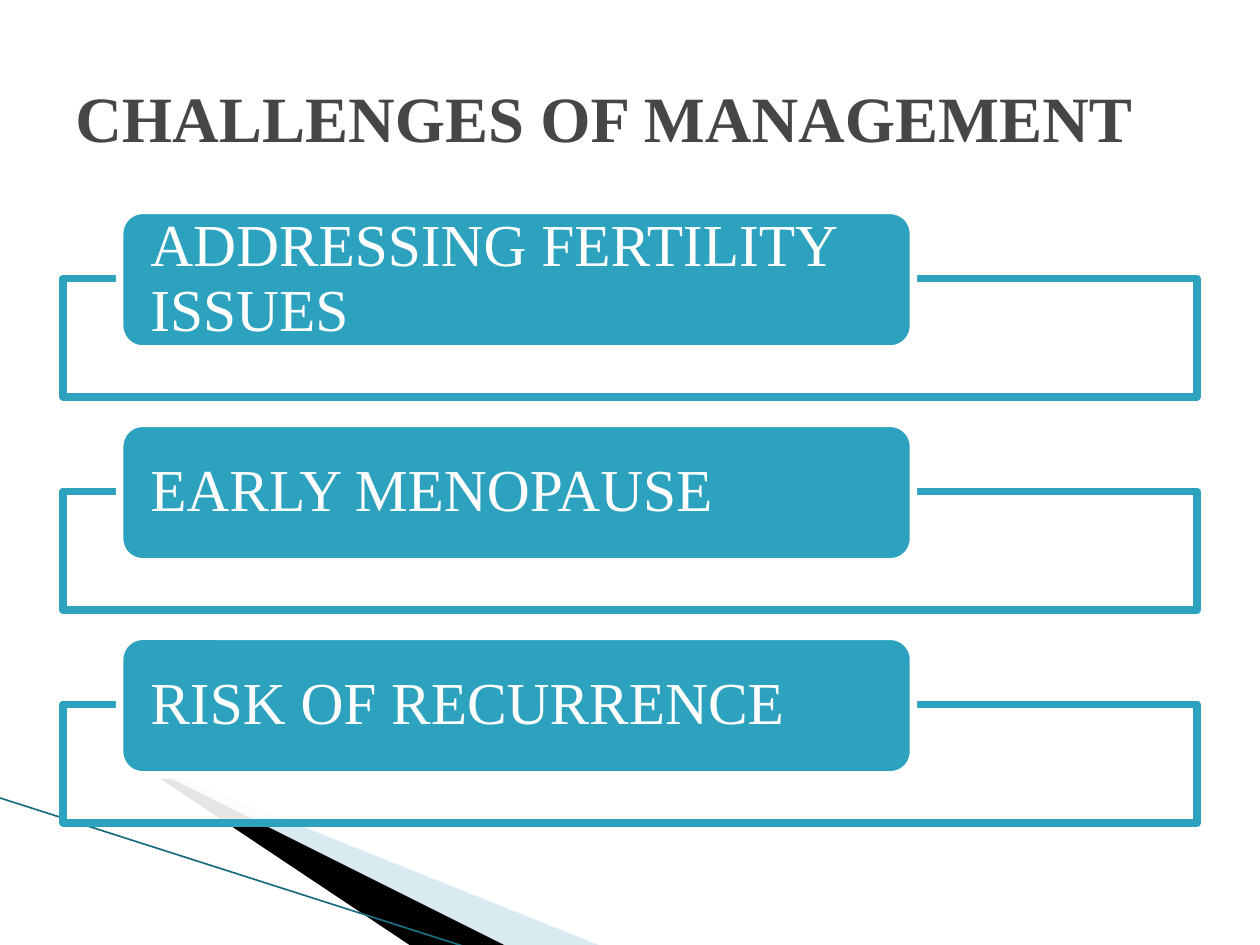
"""Build the slide on the challenges of management."""
from lxml.etree import SubElement
from pptx import Presentation
from pptx.dml.color import RGBColor as Rgb
from pptx.enum.shapes import MSO_CONNECTOR as Link, MSO_SHAPE as Kind
from pptx.enum.text import MSO_ANCHOR as Anchor, PP_ALIGN as Align
from pptx.oxml.ns import qn
from pptx.util import Inches, Pt

HUES = {k: Rgb.from_string(v) for k, v in {
    "teal": "2DA2BF", "white": "FFFFFF", "black": "000000",
    "pale": "A0CBDC", "edge": "1B6E82", "title": "464646"}.items()}
FACE = "Times New Roman"
ITEMS = ["ADDRESSING FERTILITY ISSUES", "EARLY MENOPAUSE", "RISK OF RECURRENCE"]
LEFT, WIDE, TOP, STEP = 0.5, 9, 1.67, 1.69
WEDGES = [
    ("pale", 40, [(0.55, 6.5), (5.95, 7.51), (4.56, 7.51)]),
    ("black", 100, [(0.53, 6.49), (4.57, 7.51), (3.72, 7.52)]),
]


def paint(shape, hue, share=100, line=None):
    shape.shadow.inherit = False
    shape.fill.solid()
    shape.fill.fore_color.rgb = HUES[hue]
    if share < 100:
        tint = shape.fill._xPr.find(qn("a:solidFill"))[0]
        SubElement(tint, qn("a:alpha")).set("val", str(share * 1000))
    if line:
        shape.line.color.rgb = HUES[line]
        shape.line.width = Pt(4.33)
        SubElement(shape.line._get_or_add_ln(), qn("a:round"))
    else:
        shape.line.fill.background()


def write(shape, text, size, hue, pad, bold=False):
    frame = shape.text_frame
    frame.word_wrap = True
    frame.vertical_anchor = Anchor.MIDDLE
    frame.margin_left = frame.margin_right = Inches(pad)
    frame.margin_top = frame.margin_bottom = 0
    para = frame.paragraphs[0]
    para.alignment = Align.LEFT
    run = para.add_run()
    run.text = text
    run.font.name, run.font.size, run.font.bold = FACE, Pt(size), bold
    run.font.color.rgb = HUES[hue]
    return para


deck = Presentation()
deck.slide_width, deck.slide_height = Inches(10), Inches(7.5)
slide = deck.slides.add_slide(deck.slide_layouts[6])
shapes = slide.shapes

for hue, share, (start, *rest) in WEDGES:
    pen = shapes.build_freeform(*start, scale=Inches(1))
    pen.add_line_segments(rest, close=True)
    paint(pen.convert_to_shape(), hue, share)

edge = shapes.add_connector(
    Link.STRAIGHT, Inches(-0.01), Inches(6.33), Inches(3.71), Inches(7.52))
edge.line.color.rgb = HUES["edge"]
edge.line.width = Pt(0.95)
SubElement(edge._element.spPr, qn("a:effectLst"))

for row, item in enumerate(ITEMS):
    top = TOP + row * STEP
    frame = shapes.add_shape(
        Kind.RECTANGLE, Inches(LEFT), Inches(top + 0.54), Inches(WIDE), Inches(0.94))
    paint(frame, "white", 90, "teal")
    label = shapes.add_shape(
        Kind.ROUNDED_RECTANGLE, Inches(LEFT + WIDE * 0.05), Inches(top),
        Inches(WIDE * 0.7), Inches(1.1))
    paint(label, "teal", line="white")
    write(label, item, 34, "white", 0.19).line_spacing = 0.9

title = shapes.add_textbox(Inches(LEFT), Inches(0.3), Inches(WIDE), Inches(1.25))
write(title, "CHALLENGES OF MANAGEMENT", 36.9, "title", 0.1, bold=True)

deck.save("out.pptx")
